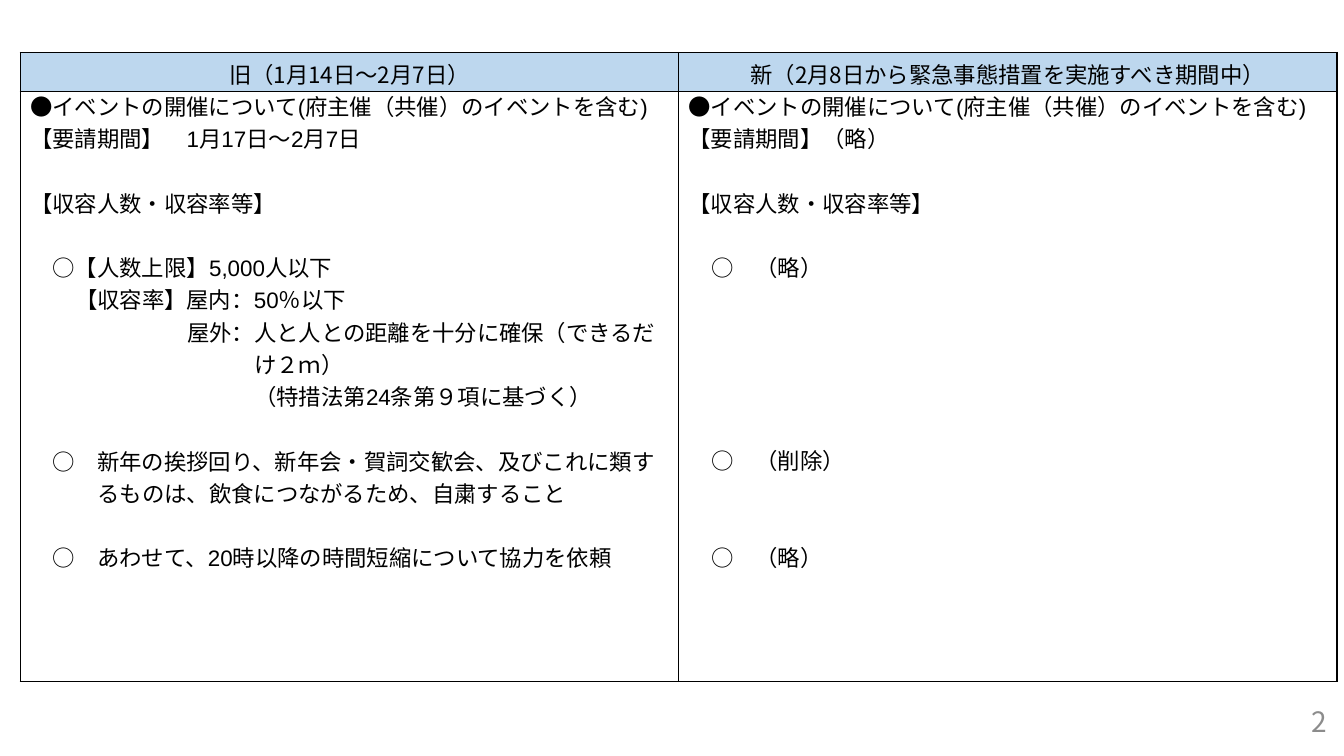
from lxml.etree import SubElement
from pptx import Presentation
from pptx.dml.color import RGBColor
from pptx.enum.text import MSO_ANCHOR, PP_ALIGN
from pptx.oxml.ns import qn
from pptx.util import Inches, Pt

BLACK = RGBColor(0x00, 0x00, 0x00)
GREY = RGBColor(0x8C, 0x8C, 0x8C)
PALE_BLUE = RGBColor(0xBD, 0xD7, 0xEE)
GOTHIC = "Noto Sans CJK JP"
LATIN = "Arial"
BODY_SIZE = 16
LINE_HEIGHT = 23

HEADERS = ["旧（1月14日～2月7日）", "新（2月8日から緊急事態措置を実施すべき期間中）"]
EVENT_TITLE = "イベントの開催について(府主催（共催）のイベントを含む)"
CAPACITY = "【収容人数・収容率等】"

# Each entry: text, empty lines above, first-line indent and wrapped-line indent in characters
OLD_RULES = [
    ("【要請期間】　1月17日～2月7日", 0, 0, 0),
    (CAPACITY, 1, 0, 0),
    ("○【人数上限】5,000人以下\v【収容率】屋内：50％以下", 1, 1, 2),
    ("屋外：人と人との距離を十分に確保（できるだ\vけ２ｍ）\v（特措法第24条第９項に基づく）", 0, 7, 10),
    ("○　新年の挨拶回り、新年会・賀詞交歓会、及びこれに類す\vるものは、飲食につながるため、自粛すること", 1, 1, 3),
    ("○　あわせて、20時以降の時間短縮について協力を依頼", 1, 1, 3),
]
NEW_RULES = [
    ("【要請期間】（略）", 0, 0, 0),
    (CAPACITY, 1, 0, 0),
    ("○　（略）", 1, 1, 3),
    ("○　（削除）", 5, 1, 3),
    ("○　（略）", 2, 1, 3),
]


class SlideBuilder:
    def __init__(self, slide):
        self.slide = slide

    def style(self, r, latin=LATIN, size=BODY_SIZE, color=BLACK):
        r.font.size = Pt(size)
        r.font.bold = False
        r.font.color.rgb = color
        r.font.name = latin
        SubElement(r.font._element, qn("a:ea"), typeface=GOTHIC)

    def border(self, cell):
        """Draw a thin black line on all four sides of a cell."""
        tc_pr = cell._tc.get_or_add_tcPr()
        for i, side in enumerate(("lnL", "lnR", "lnT", "lnB")):
            ln = tc_pr.makeelement(qn(f"a:{side}"), {"w": str(Pt(1))})
            fill = SubElement(ln, qn("a:solidFill"))
            SubElement(fill, qn("a:srgbClr"), val=str(BLACK))
            tc_pr.insert(i, ln)

    def header_cell(self, cell, text):
        cell.fill.solid()
        cell.fill.fore_color.rgb = PALE_BLUE
        self.border(cell)
        p = cell.text_frame.paragraphs[0]
        p.text = text
        p.alignment = PP_ALIGN.CENTER
        self.style(p.runs[0], GOTHIC)

    def rules_cell(self, cell, rules):
        cell.fill.background()
        self.border(cell)
        tf = cell.text_frame
        p = tf.paragraphs[0]
        p.line_spacing = Pt(18)
        for text, latin in (("●", GOTHIC), (EVENT_TITLE, LATIN)):
            r = p.add_run()
            r.text = text
            self.style(r, latin)
        for text, gap, first, rest in rules:
            p = tf.add_paragraph()
            p.text = text
            p.space_before = Pt(gap * LINE_HEIGHT)
            p_pr = p._p.get_or_add_pPr()
            p_pr.set("marL", str(Pt(rest * BODY_SIZE)))
            p_pr.set("indent", str(Pt((first - rest) * BODY_SIZE)))
            for r in p.runs:
                self.style(r)

    def comparison_table(self, left, top, widths, heights, headers, columns):
        frame = self.slide.shapes.add_table(
            len(heights), len(widths), Inches(left), Inches(top),
            Inches(sum(widths)), Inches(sum(heights)))
        table = frame.table
        table.first_row = table.horz_banding = False
        for row, height in zip(table.rows, heights):
            row.height = Inches(height)
        for i, width in enumerate(widths):
            table.columns[i].width = Inches(width)
            self.header_cell(table.cell(0, i), headers[i])
            self.rules_cell(table.cell(1, i), columns[i])

    def page_number(self, text, left, top, width, height):
        sp = self.slide.shapes.add_textbox(
            Inches(left), Inches(top), Inches(width), Inches(height))
        tf = sp.text_frame
        tf.word_wrap = True
        tf.vertical_anchor = MSO_ANCHOR.MIDDLE
        p = tf.paragraphs[0]
        p.text = text
        p.alignment = PP_ALIGN.RIGHT
        self.style(p.runs[0], GOTHIC, 20, GREY)


def main():
    prs = Presentation()
    prs.slide_width, prs.slide_height = Inches(13.33), Inches(7.5)
    s = SlideBuilder(prs.slides.add_slide(prs.slide_layouts[6]))
    s.page_number("2", 10.26, 6.96, 3, 0.4)
    s.comparison_table(0.2, 0.52, [6.53, 6.53], [0.39, 5.85],
                       HEADERS, [OLD_RULES, NEW_RULES])
    prs.save("out.pptx")


if __name__ == "__main__":
    main()
